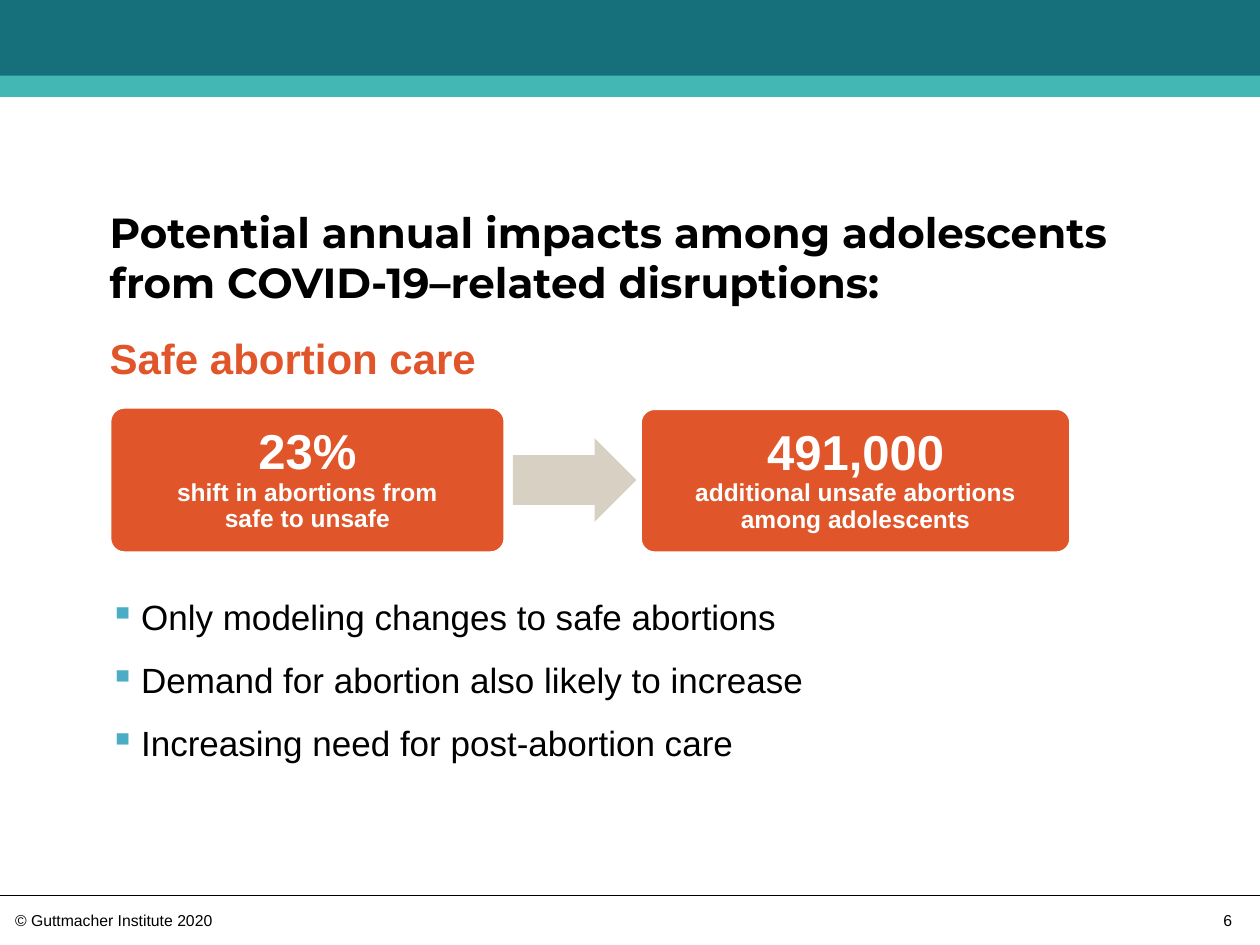
from pptx import Presentation
from pptx.dml.color import RGBColor
from pptx.enum import shapes, text
from pptx.oxml import parse_xml
from pptx.oxml.ns import nsdecls, qn
from pptx.util import Inches, Pt

THEME = {
    "black": RGBColor(0, 0, 0), "white": RGBColor(255, 255, 255),
    "band": RGBColor(0x15, 0x70, 0x7C), "stripe": RGBColor(0x43, 0xB7, 0xB3),
    "accent": RGBColor(0xE0, 0x55, 0x29), "arrow": RGBColor(0xD8, 0xD0, 0xC3),
    "bullet": "4BACC6", "body_font": "Arial", "title_font": "Montserrat",
    "heading": 24, "figure": 28, "label": 14, "body": 20, "footer": 9,
}

deck = Presentation()
deck.slide_width, deck.slide_height = Inches(10), Inches(7.5)
page = deck.slides.add_slide(deck.slide_layouts[5])
COLUMN, ROW = deck.slide_width / 100, deck.slide_height / 75
MARGIN = 8.7


def grid(column, row, columns, rows):
    """Turn grid columns and rows into left, top, width and height."""
    return [round(n * unit) for n, unit in
            ((column, COLUMN), (row, ROW), (columns, COLUMN), (rows, ROW))]


def write(para, words, size, color="black", bold=False, font="body_font"):
    """Add one formatted run to a paragraph."""
    span = para.add_run()
    span.text = words
    span.font.name = THEME[font]
    span.font.size = Pt(THEME[size])
    span.font.bold = bold
    span.font.color.rgb = THEME[color]


# Header bands
for top, height, color in ((0, 7.7, "band"), (6, 1.7, "stripe")):
    band = page.shapes.add_shape(shapes.MSO_SHAPE.RECTANGLE, *grid(0, top, 100, height))
    band.shadow.inherit = False
    band.fill.solid()
    band.fill.fore_color.rgb = THEME[color]
    band.line.fill.background()

# Footer rule
left, top, width, _ = grid(0, 71.1, 100, 0)
rule = page.shapes.add_connector(shapes.MSO_CONNECTOR.STRAIGHT, left, top, left + width, top)
rule.line.color.rgb = THEME["black"]
rule.line.width = Pt(0.75)
rule._element.spPr.append(parse_xml(f"<a:effectLst {nsdecls('a')}/>"))

# Title
title = page.shapes.title
title.left, title.top, title.width, title.height = grid(MARGIN, 16.3, 88.4, 8.1)
title.text_frame.vertical_anchor = text.MSO_ANCHOR.BOTTOM
title_para = title.text_frame.paragraphs[0]
title_para.alignment = text.PP_ALIGN.LEFT
write(title_para, "Potential annual impacts among adolescents from COVID-19–related disruptions:",
      "heading", bold=True, font="title_font")

# Subheading, footer and page number
labels = (
    (grid(MARGIN, 26.4, 30.3, 4), "Safe abortion care", "heading", "accent", True, "LEFT"),
    (grid(1.2, 72.3, 18.4, 1.5), "© Guttmacher Institute 2020", "footer", "black", False, "LEFT"),
    (grid(94.3, 72.3, 3.5, 1.5), "6", "footer", "black", False, "RIGHT"),
)
frames = [title.text_frame]
for place, words, size, color, bold, side in labels:
    box = page.shapes.add_textbox(*place)
    para = box.text_frame.paragraphs[0]
    para.alignment = text.PP_ALIGN[side]
    write(para, words, size, color, bold)
    frames.append(box.text_frame)

# Bulleted points
points = page.shapes.add_textbox(*grid(MARGIN, 47.3, 86.6, 19)).text_frame
frames.append(points)
for number, words in enumerate((
    "Only modeling changes to safe abortions",
    "Demand for abortion also likely to increase",
    "Increasing need for post-abortion care",
)):
    para = points.add_paragraph() if number else points.paragraphs[0]
    if number:
        para.space_before = Pt(12)
    properties = para._p.get_or_add_pPr()
    properties.set("marL", str(Inches(0.25)))
    properties.set("indent", str(-Inches(0.25)))
    color = properties.makeelement(qn("a:buClr"), {})
    color.append(color.makeelement(qn("a:srgbClr"), {"val": THEME["bullet"]}))
    properties.append(color)
    properties.append(properties.makeelement(qn("a:buChar"), {"char": "▪"}))
    write(para, words, "body")

# All plain text sits flush with its frame
for frame in frames:
    frame.auto_size = text.MSO_AUTO_SIZE.NONE
    frame.word_wrap = True
    frame.margin_left = frame.margin_right = frame.margin_top = frame.margin_bottom = 0

# Arrow from cause to effect
arrow = page.shapes.add_shape(shapes.MSO_SHAPE.RIGHT_ARROW, *grid(40.7, 34.8, 9.8, 6.6))
arrow.adjustments[0], arrow.adjustments[1] = 0.6, 0.5
arrow.shadow.inherit = False
arrow.fill.solid()
arrow.fill.fore_color.rgb = THEME["arrow"]
arrow.line.fill.background()

# Cause and effect cards
cards = (
    (grid(MARGIN, 32.3, 31.4, 11.6), ("23%", "shift in abortions from", "safe to unsafe")),
    (grid(50.8, 32.4, 34.2, 11.5), ("491,000", "additional unsafe abortions among adolescents")),
)
for place, lines in cards:
    card = page.shapes.add_shape(shapes.MSO_SHAPE.ROUNDED_RECTANGLE, *place)
    card.adjustments[0] = 0.1
    card.shadow.inherit = False
    card.fill.solid()
    card.fill.fore_color.rgb = THEME["accent"]
    card.line.color.rgb = THEME["white"]
    card.line.width = Pt(2)
    frame = card.text_frame
    frame.word_wrap = True
    frame.vertical_anchor = text.MSO_ANCHOR.MIDDLE
    frame.margin_left = frame.margin_right = Inches(0.15)
    para = frame.paragraphs[0]
    para.alignment = text.PP_ALIGN.CENTER
    para.line_spacing = 0.9
    for number, words in enumerate(lines):
        if number:
            para.add_line_break()
        write(para, words, "label" if number else "figure", "white", True)

deck.save("out.pptx")
